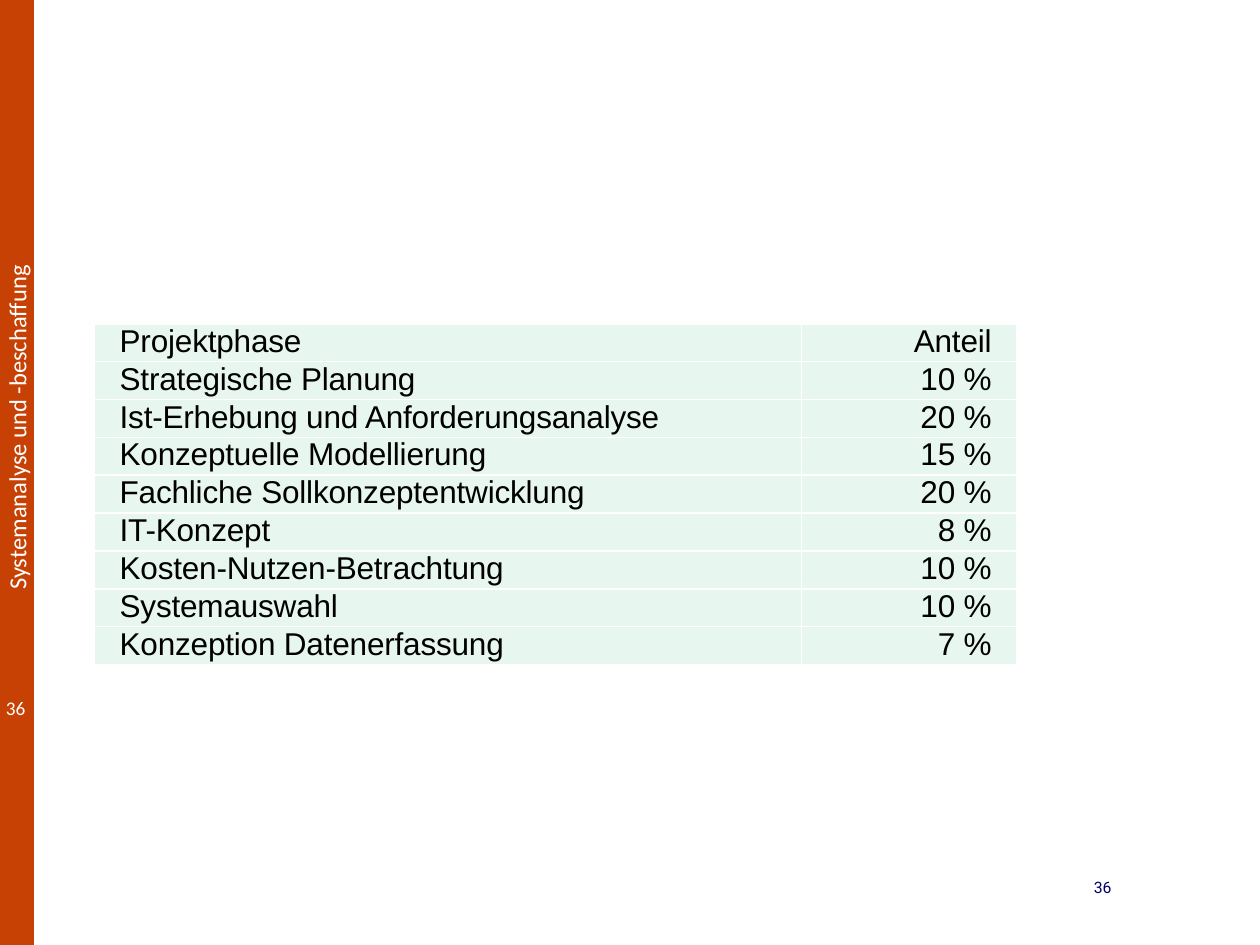
from lxml import etree
from pptx import Presentation
from pptx.dml.color import RGBColor
from pptx.enum.shapes import MSO_SHAPE
from pptx.enum.text import MSO_AUTO_SIZE, PP_ALIGN
from pptx.oxml.ns import qn
from pptx.util import Inches, Pt

RECTANGLE = MSO_SHAPE.RECTANGLE
GROW = MSO_AUTO_SIZE.SHAPE_TO_FIT_TEXT
LEFT, RIGHT = PP_ALIGN.LEFT, PP_ALIGN.RIGHT

SLIDE_WIDTH, SLIDE_HEIGHT = Inches(10), Inches(7.5)
BLANK_LAYOUT = 6
PAGE = "36"
COURSE = "Systemanalyse und -beschaffung"
PHASES = [
    ("Projektphase", "Anteil"),
    ("Strategische Planung", "10 %"),
    ("Ist-Erhebung und Anforderungsanalyse", "20 %"),
    ("Konzeptuelle Modellierung", "15 %"),
    ("Fachliche Sollkonzeptentwicklung", "20 %"),
    ("IT-Konzept", "8 %"),
    ("Kosten-Nutzen-Betrachtung", "10 %"),
    ("Systemauswahl", "10 %"),
    ("Konzeption Datenerfassung", "7 %"),
]
COLUMN_WIDTHS = (5.61, 1.71)
ROW_HEIGHT = 0.3
CELL_FORMAT = {
    "margin_left": Inches(0.2),
    "margin_right": Inches(0.2),
    "margin_top": 0,
    "margin_bottom": 0,
}


def colour(hex_value):
    return RGBColor.from_string(hex_value)


def write(frame, text, font, size, hex_value, align=LEFT):
    """Fill a text frame with one formatted paragraph and return its run."""
    paragraph = frame.paragraphs[0]
    paragraph.alignment = align
    run = paragraph.add_run()
    run.text = text
    for name, value in {"name": font, "size": Pt(size)}.items():
        setattr(run.font, name, value)
    run.font.color.rgb = colour(hex_value)
    return run


def add_label(slide, box, *text_format):
    label = slide.shapes.add_textbox(*map(Inches, box))
    label.text_frame.word_wrap = True
    write(label.text_frame, *text_format)
    return label


def add_side_band(slide, box):
    """Coloured band with the upright course title and the page number."""
    left, top, width, height = box
    band = slide.shapes.add_shape(RECTANGLE, *map(Inches, box))
    band.shadow.inherit = False
    band.fill.solid()
    band.fill.fore_color.rgb = colour("C84104")
    band.line.fill.background()

    length, thickness = 2.81, 0.34
    title_box = (left + width / 2 - length / 2, top + height * 0.45 - thickness / 2,
                 length, thickness)
    title = add_label(slide, title_box, COURSE, "Calibri", 14, "FFFFFF")
    title.rotation = 270
    title.text_frame.word_wrap = False
    title.text_frame.auto_size = GROW

    number_box = (left + width - 0.39, top + height * 0.73, 0.42, 0.33)
    add_label(slide, number_box, PAGE, "Calibri", 11, "FFFFFF", RIGHT)


def add_borders(cell, hex_value, points):
    properties = cell._tc.get_or_add_tcPr()
    for index, side in enumerate(("a:lnL", "a:lnR", "a:lnT", "a:lnB")):
        border = etree.Element(qn(side), w=str(Pt(points)))
        fill = etree.SubElement(border, qn("a:solidFill"))
        etree.SubElement(fill, qn("a:srgbClr"), val=hex_value)
        properties.insert(index, border)


def add_phase_table(slide, left, top):
    size = (sum(COLUMN_WIDTHS), ROW_HEIGHT * len(PHASES))
    table = slide.shapes.add_table(len(PHASES), len(COLUMN_WIDTHS),
                                   *map(Inches, (left, top, *size))).table
    table.first_row = table.horz_banding = False
    for column, width in zip(table.columns, COLUMN_WIDTHS):
        column.width = Inches(width)
    for row, phase in zip(table.rows, PHASES):
        row.height = Inches(ROW_HEIGHT)
        for cell, text, align in zip(row.cells, phase, (LEFT, RIGHT)):
            for name, value in CELL_FORMAT.items():
                setattr(cell, name, value)
            cell.fill.solid()
            cell.fill.fore_color.rgb = colour("E7F6EF")
            add_borders(cell, "FFFFFF", 1)
            run = write(cell.text_frame, text, "Arial", 18, "000000", align)
            run.font._element.set("spc", "-10")


def main():
    deck = Presentation()
    deck.slide_width, deck.slide_height = SLIDE_WIDTH, SLIDE_HEIGHT
    slide = deck.slides.add_slide(deck.slide_layouts[BLANK_LAYOUT])
    add_side_band(slide, (0, 0, 0.27, SLIDE_HEIGHT.inches))
    add_phase_table(slide, 0.75, 2.57)
    add_label(slide, (6.92, 6.92, 2, 0.42), PAGE, "Roboto", 9, "000066", RIGHT)
    deck.save("out.pptx")


if __name__ == "__main__":
    main()
